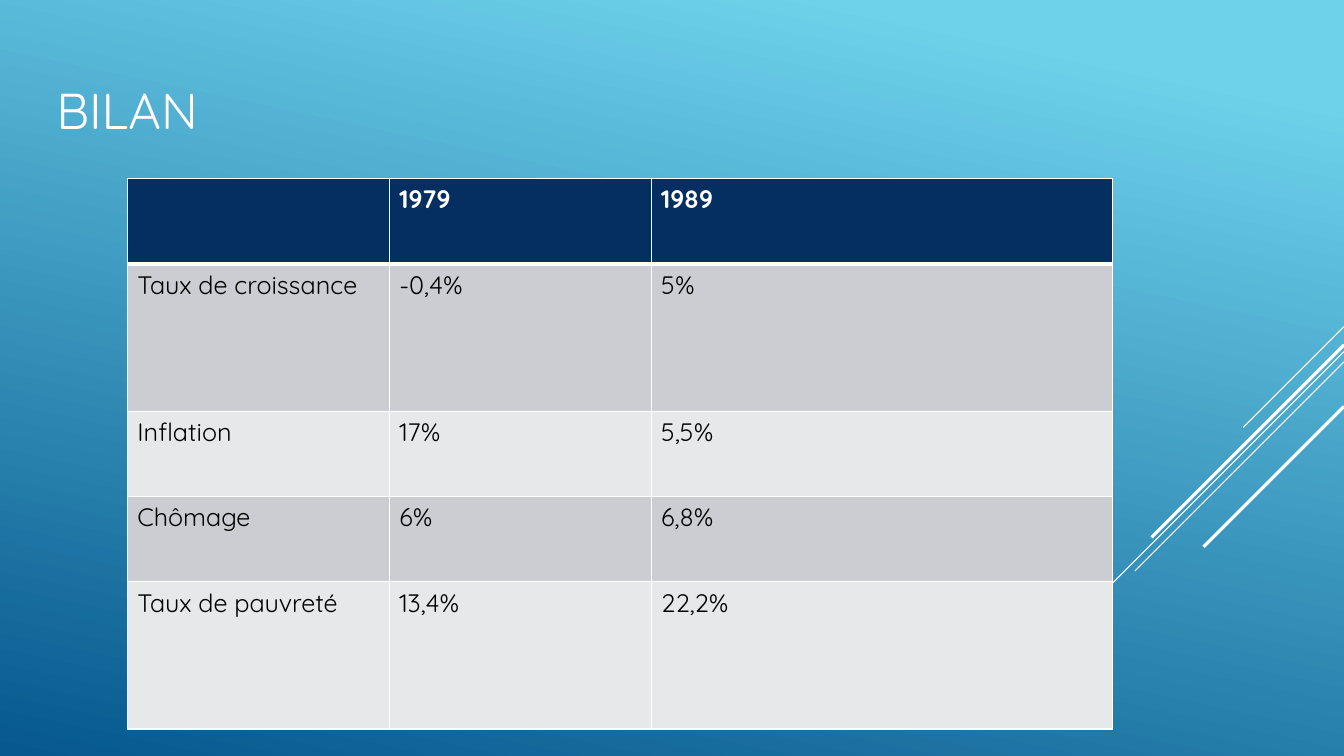
from dataclasses import dataclass

from lxml import etree
from pptx import Presentation
from pptx.dml.color import RGBColor
from pptx.enum.shapes import MSO_CONNECTOR
from pptx.enum.text import MSO_ANCHOR
from pptx.oxml.ns import qn
from pptx.slide import Slide
from pptx.table import _Cell
from pptx.text.text import TextFrame
from pptx.util import Cm, Pt

STRAIGHT = MSO_CONNECTOR.STRAIGHT
MIDDLE = MSO_ANCHOR.MIDDLE
FONT = "Quicksand"
WHITE, BLACK, NAVY = "FFFFFF", "000000", "052F61"
BANDS = ("CCCDD2", "E7E8EA")
SLIDE_W, SLIDE_H = 33.87, 19.05


@dataclass(frozen=True)
class Streak:
    top: float
    run: float
    weight: float


@dataclass(frozen=True)
class Row:
    height: float
    texts: tuple[str, str, str]


STREAKS = (
    Streak(8.23, 2.54, 0.75),
    Streak(8.86, 8.28, 0.75),
    Streak(9.12, 5.27, 0.75),
    Streak(8.69, 4.85, 2.25),
    Streak(10.24, 3.54, 2.25),
)
COL_WIDTHS = (6.6, 6.6, 11.62)
ROWS = (
    Row(2.15, ("", "1979", "1989")),
    Row(3.71, ("Taux de croissance", "-0,4%", "5%")),
    Row(2.15, ("Inflation", "17%", "5,5%")),
    Row(2.15, ("Chômage", "6%", "6,8%")),
    Row(3.71, ("Taux de pauvreté", "13,4%", "22,2%")),
)


def rgb(value: str) -> RGBColor:
    return RGBColor.from_string(value)


def set_background(s: Slide) -> None:
    fill = s.background.fill
    fill.gradient()
    fill.gradient_angle = 258
    for stop, (position, color) in zip(fill.gradient_stops, ((0.1, "6ED2EB"), (1, "06588E"))):
        stop.position = position
        stop.color.rgb = rgb(color)


def add_streak(s: Slide, streak: Streak) -> None:
    line = s.shapes.add_connector(
        STRAIGHT, Cm(SLIDE_W), Cm(streak.top),
        Cm(SLIDE_W - streak.run), Cm(streak.top + streak.run),
    )
    line.line.color.rgb = rgb(WHITE)
    line.line.width = Pt(streak.weight)
    etree.SubElement(line._element.spPr, qn("a:effectLst"))


def add_text(tf: TextFrame, text: str, size: int, color: str, bold: bool = False) -> None:
    r = tf.paragraphs[0].add_run()
    r.text = text
    r.font.name = FONT
    r.font.size = Pt(size)
    r.font.bold = bold
    r.font.color.rgb = rgb(color)


def add_title(s: Slide) -> None:
    sp = s.shapes.add_textbox(Cm(1.17), Cm(0.66), Cm(23.7), Cm(4.19))
    tf = sp.text_frame
    tf.word_wrap = True
    tf.vertical_anchor = MIDDLE
    add_text(tf, "BILAN", 36, WHITE)


def set_borders(cell: _Cell, top: int, bottom: int) -> None:
    tc_pr = cell._tc.get_or_add_tcPr()
    for side, weight in (("L", 1), ("R", 1), ("T", top), ("B", bottom)):
        ln = etree.SubElement(tc_pr, qn(f"a:ln{side}"), w=str(Pt(weight)))
        fill = etree.SubElement(ln, qn("a:solidFill"))
        etree.SubElement(fill, qn("a:srgbClr"), val=WHITE)


def add_results_table(s: Slide) -> None:
    frame = s.shapes.add_table(
        len(ROWS), len(COL_WIDTHS), Cm(3.21), Cm(4.5),
        Cm(sum(COL_WIDTHS)), Cm(sum(row.height for row in ROWS)),
    )
    table = frame.table
    table.horz_banding = False
    table.first_row = False
    for column, width in zip(table.columns, COL_WIDTHS):
        column.width = Cm(width)
    for i, row in enumerate(ROWS):
        header = i == 0
        table.rows[i].height = Cm(row.height)
        for j, text in enumerate(row.texts):
            cell = table.cell(i, j)
            set_borders(cell, top=3 if i == 1 else 1, bottom=3 if header else 1)
            cell.fill.solid()
            cell.fill.fore_color.rgb = rgb(NAVY if header else BANDS[(i - 1) % 2])
            if text:
                add_text(cell.text_frame, text, 18, WHITE if header else BLACK, header)


def main() -> None:
    prs = Presentation()
    prs.slide_width = Cm(SLIDE_W)
    prs.slide_height = Cm(SLIDE_H)
    s = prs.slides.add_slide(prs.slide_layouts[6])
    set_background(s)
    for streak in STREAKS:
        add_streak(s, streak)
    add_title(s)
    add_results_table(s)
    prs.save("out.pptx")


if __name__ == "__main__":
    main()
